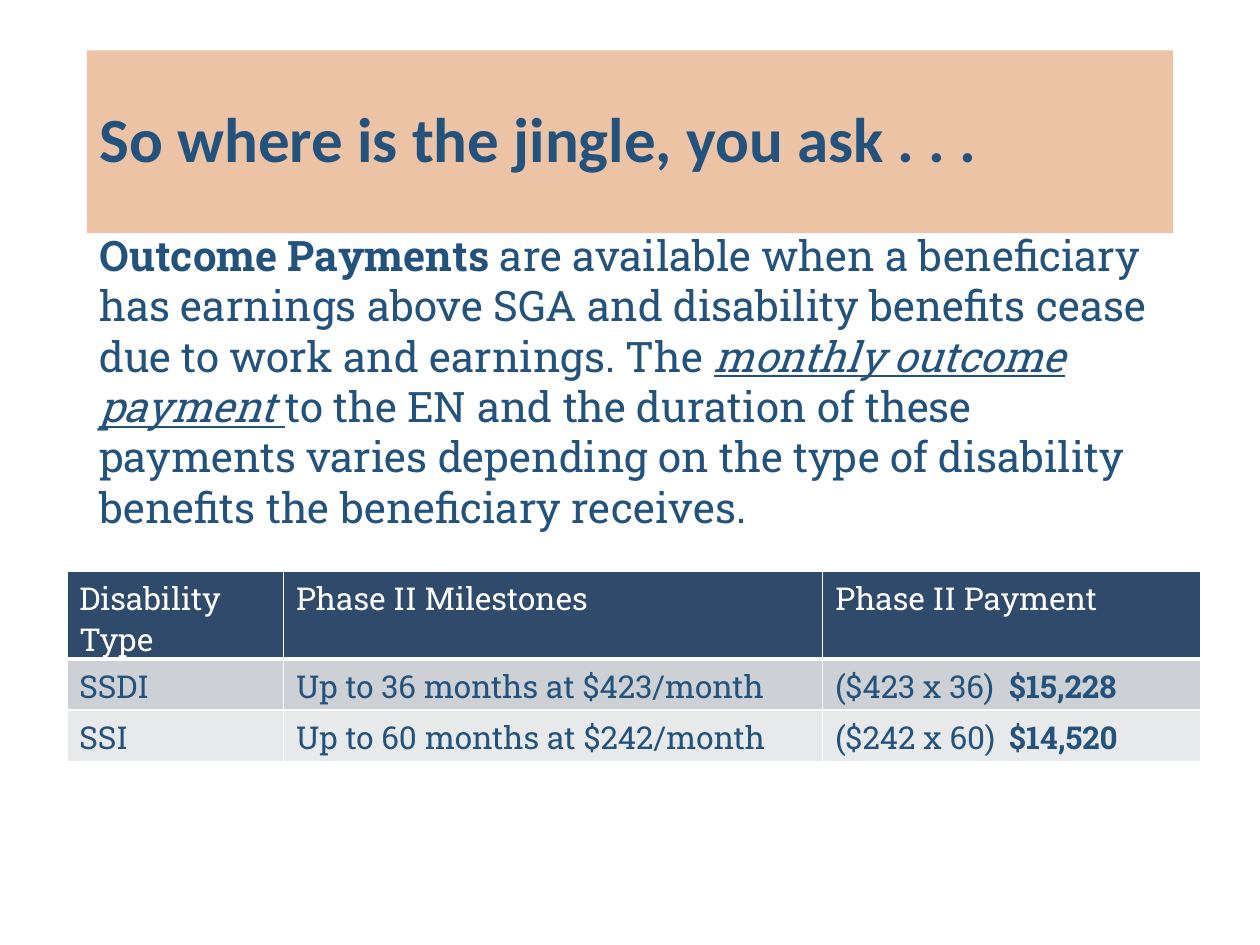
from dataclasses import dataclass

from lxml.etree import SubElement
from pptx import Presentation
from pptx.dml.color import RGBColor
from pptx.enum.text import MSO_ANCHOR, MSO_AUTO_SIZE, PP_ALIGN
from pptx.oxml.ns import qn
from pptx.util import Emu, Inches, Pt


@dataclass(frozen=True)
class Theme:
    ink: str = "23527C"
    white: str = "FFFFFF"
    title_band: str = "EDC3A6"
    header_row: str = "2F4A6B"
    row_bands: tuple = ("CDD0D4", "E8E9EB")
    title_font: str = "Calibri"
    body_font: str = "Roboto Slab"
    title_size: int = 36
    body_size: int = 24
    table_size: int = 18
    rule: int = 1
    header_rule: int = 3


THEME = Theme()
SLIDE_W, SLIDE_H = Inches(10), Inches(7.5)

# Regions in inches: left, top, width, height
TITLE_BOX = (0.69, 0.4, 8.62, 1.45)
BODY_BOX = (0.69, 1.77, 8.52, 2.12)
TABLE_BOX = (0.53, 4.53, 9, 1.22)

# Column widths as shares of the table, and where the totals line up
COLUMN_SHARES = (1.72 / 9, 4.28 / 9, 3 / 9)
TOTAL_TAB = 1.38

TITLE = "So where is the jingle, you ask . . ."
BODY = [
    ("Outcome Payments", "bold"),
    (" are available when a beneficiary has earnings above SGA and disability "
     "benefits cease due to work and earnings. The ", ""),
    ("monthly outcome payment ", "stressed"),
    ("to the EN and the duration of these payments varies depending on the "
     "type of disability benefits the beneficiary receives.", ""),
]
HEADINGS = ("Disability Type", "Phase II Milestones", "Phase II Payment")
# Type, months, monthly payment, total
PAYMENTS = [("SSDI", 36, 423, 15228), ("SSI", 60, 242, 14520)]


def in_inches(box):
    return [Inches(length) for length in box]


def write_runs(paragraph, pieces, font_name, size, color):
    for text, style in pieces:
        run = paragraph.add_run()
        run.text = text
        font = run.font
        font.name, font.size = font_name, Pt(size)
        font.color.rgb = RGBColor.from_string(color)
        font.bold = style == "bold"
        font.italic = font.underline = style == "stressed"


def add_title(slide, box):
    title = slide.shapes.title
    title.left, title.top, title.width, title.height = in_inches(box)
    title.fill.solid()
    title.fill.fore_color.rgb = RGBColor.from_string(THEME.title_band)
    frame = title.text_frame
    frame.auto_size = MSO_AUTO_SIZE.NONE
    frame.vertical_anchor = MSO_ANCHOR.MIDDLE
    heading = frame.paragraphs[0]
    heading.alignment = PP_ALIGN.LEFT
    heading.line_spacing = 0.9
    write_runs(heading, [(TITLE, "bold")], THEME.title_font,
               THEME.title_size, THEME.ink)


def add_body(slide, box):
    frame = slide.shapes.add_textbox(*in_inches(box)).text_frame
    frame.word_wrap = True
    frame.auto_size = MSO_AUTO_SIZE.SHAPE_TO_FIT_TEXT
    write_runs(frame.paragraphs[0], BODY, THEME.body_font,
               THEME.body_size, THEME.ink)


def set_borders(cell, bottom):
    properties = cell._tc.get_or_add_tcPr()
    sides = {"L": THEME.rule, "R": THEME.rule, "T": THEME.rule, "B": bottom}
    for side, width in sides.items():
        line = SubElement(properties, qn(f"a:ln{side}"), w=str(Pt(width)))
        fill = SubElement(line, qn("a:solidFill"))
        SubElement(fill, qn("a:srgbClr"), val=THEME.white)


def add_total_tab(paragraph):
    tabs = SubElement(paragraph._p.get_or_add_pPr(), qn("a:tabLst"))
    SubElement(tabs, qn("a:tab"), pos=str(Inches(TOTAL_TAB)), algn="l")


def add_payment_table(slide, box):
    rows = [[[(heading, "")] for heading in HEADINGS]]
    for kind, months, monthly, total in PAYMENTS:
        rows.append([
            [(kind, "")],
            [(f"Up to {months} months at ${monthly}/month", "")],
            [(f"(${monthly} x {months})\t", ""), (f"${total:,}", "bold")],
        ])

    left, top, width, height = in_inches(box)
    table = slide.shapes.add_table(len(rows), len(HEADINGS),
                                   left, top, width, height).table
    for column, share in zip(table.columns, COLUMN_SHARES):
        column.width = Emu(round(width * share))

    fills = (THEME.header_row, *THEME.row_bands)
    for r, (row, fill) in enumerate(zip(rows, fills)):
        is_header = r == 0
        for c, pieces in enumerate(row):
            cell = table.cell(r, c)
            set_borders(cell, THEME.header_rule if is_header else THEME.rule)
            cell.fill.solid()
            cell.fill.fore_color.rgb = RGBColor.from_string(fill)
            paragraph = cell.text_frame.paragraphs[0]
            if len(pieces) > 1:
                add_total_tab(paragraph)
            write_runs(paragraph, pieces, THEME.body_font, THEME.table_size,
                       THEME.white if is_header else THEME.ink)


def main():
    deck = Presentation()
    deck.slide_width, deck.slide_height = SLIDE_W, SLIDE_H
    slide = deck.slides.add_slide(deck.slide_layouts[5])  # title only
    add_title(slide, TITLE_BOX)
    add_body(slide, BODY_BOX)
    add_payment_table(slide, TABLE_BOX)
    deck.save("out.pptx")


if __name__ == "__main__":
    main()
